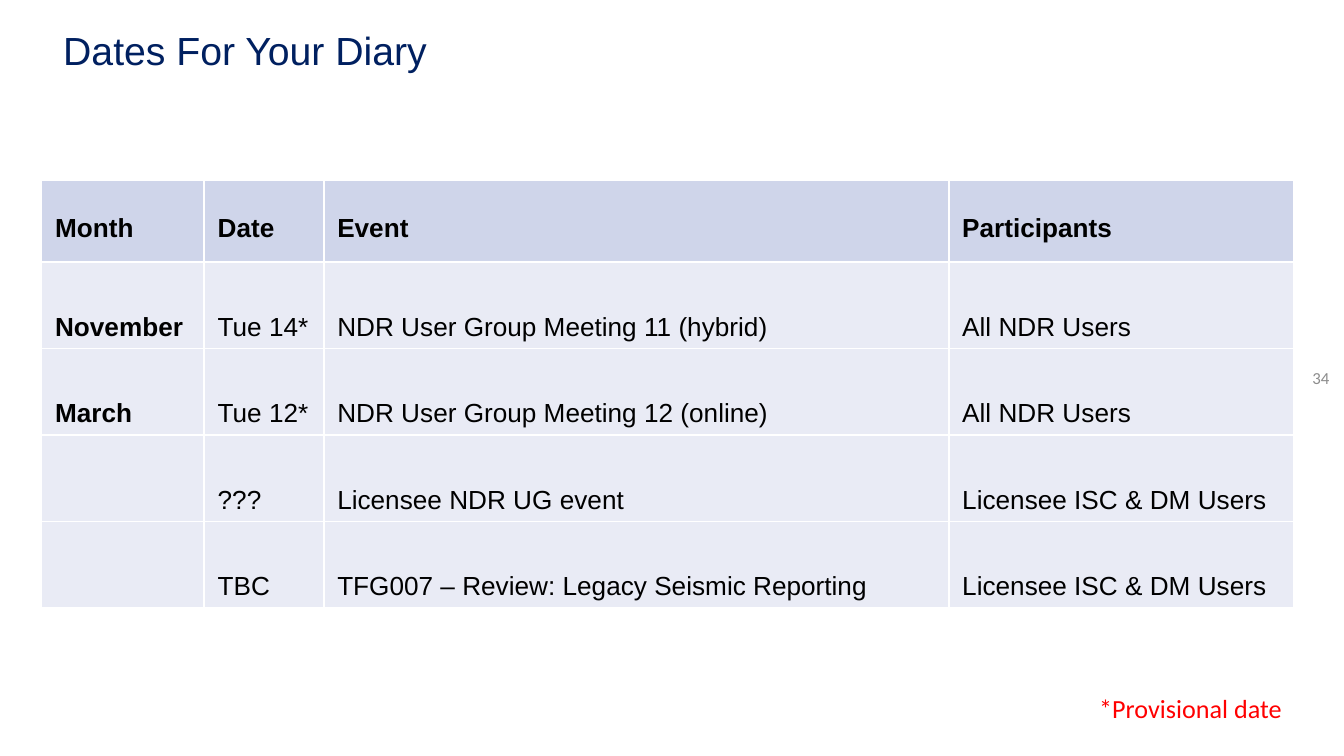
from dataclasses import dataclass
from typing import Optional

from pptx import Presentation
from pptx import util as u
from pptx.dml.color import RGBColor
from pptx.enum import text
from pptx.oxml import parse_xml
from pptx.oxml.ns import nsdecls

COLORS = {
    "navy": "002060",
    "black": "000000",
    "gray": "8C8C8C",
    "red": "FF0000",
    "white": "FFFFFF",
    "header": "CFD5EA",
    "body": "E9EBF5",
}


@dataclass
class Style:
    size: float
    color: str
    font: str = "Arial"
    bold: bool = False
    spacing: Optional[float] = None
    align: text.PP_ALIGN = text.PP_ALIGN.LEFT


@dataclass
class Event:
    month: str
    date: str
    event: str
    participants: str


HEADER = Event("Month", "Date", "Event", "Participants")
EVENTS = [
    Event("November", "Tue 14*", "NDR User Group Meeting 11 (hybrid)", "All NDR Users"),
    Event("March", "Tue 12*", "NDR User Group Meeting 12 (online)", "All NDR Users"),
    Event("", "???", "Licensee NDR UG event", "Licensee ISC & DM Users"),
    Event("", "TBC", "TFG007 – Review: Legacy Seismic Reporting", "Licensee ISC & DM Users"),
]
COL_WIDTHS = [1.21, 0.89, 4.65, 2.57]
ROW_HEIGHTS = [0.61, 0.39, 0.6, 0.59, 0.59]


def write(tf, content: str, style: Style) -> None:
    p = tf.paragraphs[0]
    p.text = content
    p.alignment = style.align
    if style.spacing:
        p.line_spacing = style.spacing
    for r in p.runs:
        r.font.size = u.Pt(style.size)
        r.font.name = style.font
        r.font.bold = style.bold
        r.font.color.rgb = RGBColor.from_string(COLORS[style.color])


def place(sp, left: float, top: float, width: float, height: float) -> None:
    sp.left, sp.top = u.Inches(left), u.Inches(top)
    sp.width, sp.height = u.Inches(width), u.Inches(height)


def add_label(s, box: tuple, content: str, style: Style, anchor: text.MSO_ANCHOR) -> None:
    sp = s.shapes.add_textbox(*(u.Inches(v) for v in box))
    tf = sp.text_frame
    tf.word_wrap = True
    tf.vertical_anchor = anchor
    write(tf, content, style)


def format_cell(cell, fill: str) -> None:
    cell.vertical_anchor = text.MSO_ANCHOR.MIDDLE
    cell.margin_left = cell.margin_right = u.Inches(0.1)
    cell.margin_top = cell.margin_bottom = u.Inches(0.03)
    props = cell._tc.get_or_add_tcPr()
    for side in ("lnL", "lnR", "lnT", "lnB"):
        props.append(parse_xml(
            f'<a:{side} {nsdecls("a")} w="12700"><a:solidFill>'
            f'<a:srgbClr val="{COLORS["white"]}"/></a:solidFill></a:{side}>'
        ))
    cell.fill.solid()
    cell.fill.fore_color.rgb = RGBColor.from_string(COLORS[fill])


def add_diary(s, left: float, top: float) -> None:
    rows = [HEADER] + EVENTS
    frame = s.shapes.add_table(
        len(rows), len(COL_WIDTHS), u.Inches(left), u.Inches(top),
        u.Inches(sum(COL_WIDTHS)), u.Inches(sum(ROW_HEIGHTS)),
    )
    table = frame.table
    for column, width in zip(table.columns, COL_WIDTHS):
        column.width = u.Inches(width)
    for i, (row, height) in enumerate(zip(rows, ROW_HEIGHTS)):
        table.rows[i].height = u.Inches(height)
        is_header = i == 0
        values = (row.month, row.date, row.event, row.participants)
        for j, value in enumerate(values):
            cell = table.cell(i, j)
            format_cell(cell, "header" if is_header else "body")
            write(cell.text_frame, value, Style(
                14, "black", bold=is_header or j == 0,
                spacing=1.5 if is_header else 2.5,
            ))


def main() -> None:
    prs = Presentation()
    prs.slide_width = u.Inches(10)
    prs.slide_height = u.Inches(10 * 9 / 16)
    s = prs.slides.add_slide(prs.slide_layouts[5])

    title = s.shapes.title
    place(title, 0.47, 0.21, 5.82, 0.41)
    tf = title.text_frame
    tf.margin_left = tf.margin_top = 0
    tf.vertical_anchor = text.MSO_ANCHOR.MIDDLE
    write(tf, "Dates For Your Diary", Style(21, "navy", spacing=0.9))

    add_label(s, (9.31, 2.63, 0.68, 0.36), "34",
              Style(9, "gray", "Calibri", align=text.PP_ALIGN.RIGHT),
              text.MSO_ANCHOR.MIDDLE)
    add_diary(s, 0.31, 1.34)
    add_label(s, (8.08, 5.1, 1.72, 0.34), "*Provisional date",
              Style(14, "red", "Calibri"), text.MSO_ANCHOR.TOP)
    prs.save("out.pptx")


if __name__ == "__main__":
    main()
